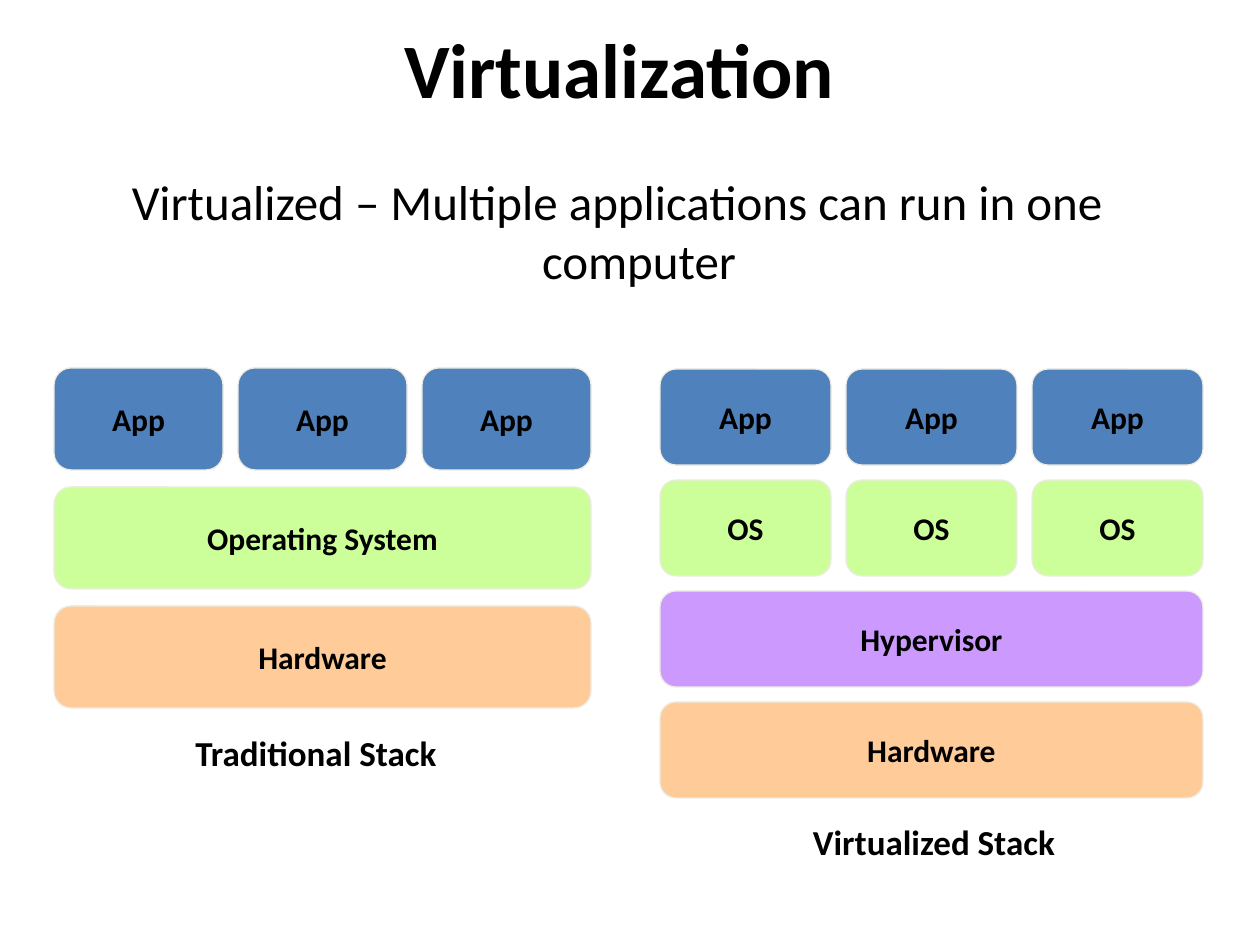
import pptx
import pptx.dml.color
import pptx.enum.shapes
import pptx.enum.text
import pptx.util

RGBColor = pptx.dml.color.RGBColor
BLACK = RGBColor(0x00, 0x00, 0x00)
BLUE = RGBColor(0x4F, 0x81, 0xBD)
GREEN = RGBColor(0xCC, 0xFF, 0x99)
ORANGE = RGBColor(0xFF, 0xCC, 0x99)
PURPLE = RGBColor(0xCC, 0x99, 0xFF)
OUTLINE = RGBColor(0xEE, 0xEC, 0xE1)

TOP = pptx.enum.text.MSO_ANCHOR.TOP
MIDDLE = pptx.enum.text.MSO_ANCHOR.MIDDLE


def px(length):
    return pptx.util.Emu(round(length * 914400 / 126))


class SlideBuilder:
    font = "Calibri"
    column_gap = 15

    def __init__(self, slide):
        self.slide = slide

    def label(self, shape, text, size, bold=True, anchor=TOP, wrap=True):
        frame = shape.text_frame
        frame.text = text
        frame.word_wrap = wrap
        frame.vertical_anchor = anchor
        paragraph = frame.paragraphs[0]
        paragraph.alignment = pptx.enum.text.PP_ALIGN.CENTER
        font = paragraph.runs[0].font
        font.name = self.font
        font.size = pptx.util.Pt(size)
        font.bold = bold
        font.color.rgb = BLACK
        return paragraph

    def title(self, text, left, top, width, height):
        shape = self.slide.shapes.title
        shape.left, shape.top = px(left), px(top)
        shape.width, shape.height = px(width), px(height)
        self.label(shape, text, 44)

    def subtitle(self, text, left, top, width, height, indent):
        shape = self.slide.shapes.add_textbox(px(left), px(top), px(width), px(height))
        paragraph = self.label(shape, text, 28, bold=False)
        properties = paragraph._p.get_or_add_pPr()
        properties.set("marL", str(px(indent)))
        properties.set("indent", str(-px(indent)))

    def box(self, group, text, color, left, top, width, height):
        shape = group.shapes.add_shape(
            pptx.enum.shapes.MSO_SHAPE.ROUNDED_RECTANGLE,
            px(left), px(top), px(width), px(height))
        shape.shadow.inherit = False
        shape.fill.solid()
        shape.fill.fore_color.rgb = color
        shape.line.color.rgb = OUTLINE
        shape.line.width = pptx.util.Pt(0.75)
        self.label(shape, text, 18, anchor=MIDDLE)

    def caption(self, group, text, left, top, width, height):
        shape = group.shapes.add_textbox(px(left), px(top), px(width), px(height))
        self.label(shape, text, 20, wrap=False)

    def stack(self, layers, left, top, width, height, row_pitch):
        group = self.slide.shapes.add_group_shape()
        for row, (text, color, count) in enumerate(layers):
            box_width = (width - (count - 1) * self.column_gap) // count
            for column in range(count):
                self.box(group, text, color,
                         left + column * (box_width + self.column_gap),
                         top + row * row_pitch, box_width, height)
        return group


def main():
    presentation = pptx.Presentation()
    presentation.slide_width = px(1260)
    presentation.slide_height = px(945)
    slide = presentation.slides.add_slide(presentation.slide_layouts[5])
    builder = SlideBuilder(slide)

    builder.title("Virtualization", 21, 15, 1197, 141)

    traditional = builder.stack(
        [("App", BLUE, 3), ("Operating System", GREEN, 1), ("Hardware", ORANGE, 1)],
        54, 368, 537, 102, 119)
    builder.caption(traditional, "Traditional Stack", 182, 725, 268, 55)

    virtualized = builder.stack(
        [("App", BLUE, 3), ("OS", GREEN, 3), ("Hypervisor", PURPLE, 1),
         ("Hardware", ORANGE, 1)],
        660, 369, 543, 96, 111)
    builder.caption(virtualized, "Virtualized Stack", 799, 814, 270, 55)

    builder.subtitle("Virtualized – Multiple applications can run in one computer",
                     54, 165, 1126, 131, 44)

    presentation.save("out.pptx")


if __name__ == "__main__":
    main()
